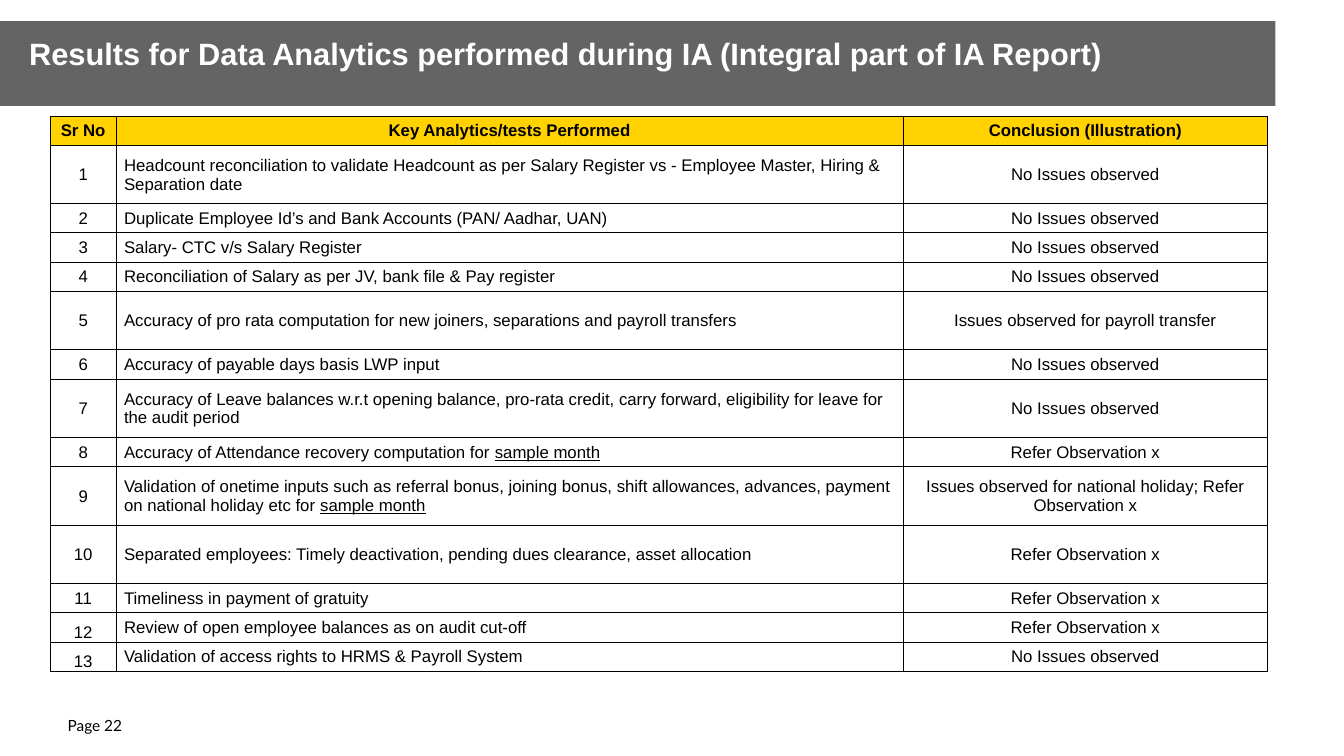
from dataclasses import dataclass

from lxml import etree
from pptx import Presentation
from pptx.dml.color import RGBColor
from pptx.enum.shapes import MSO_SHAPE
from pptx.enum.text import MSO_ANCHOR, PP_ALIGN
from pptx.oxml.ns import qn
from pptx.slide import Slide
from pptx.table import _Cell
from pptx.text.text import _Paragraph
from pptx.util import Inches, Pt

RECT = MSO_SHAPE.RECTANGLE
MIDDLE, BOTTOM = MSO_ANCHOR.MIDDLE, MSO_ANCHOR.BOTTOM
LEFT, CENTER = PP_ALIGN.LEFT, PP_ALIGN.CENTER

COLORS = {"banner": "646464", "header": "FFD200", "text": "000000",
          "title": "FFFFFF", "border": "000000"}
COL_WIDTHS = (0.65, 7.81, 3.61)
ROW_HEIGHT, TALL_ROW_HEIGHT = 0.29, 0.58
HEADERS = ("Sr No", "Key Analytics/tests Performed", "Conclusion (Illustration)")
NO_ISSUES = "No Issues observed"
REFER = "Refer Observation x"


@dataclass
class Test:
    description: str
    conclusion: str = NO_ISSUES
    underlined: str = ""
    tall: bool = False
    number_anchor: MSO_ANCHOR = MIDDLE


TESTS = [
    Test("Headcount reconciliation to validate Headcount as per Salary Register vs - "
         "Employee Master, Hiring & Separation date", tall=True),
    Test("Duplicate Employee Id’s and Bank Accounts (PAN/ Aadhar, UAN)"),
    Test("Salary- CTC v/s Salary Register"),
    Test("Reconciliation of Salary as per JV, bank file & Pay register"),
    Test("Accuracy of pro rata computation for new joiners, separations and payroll "
         "transfers", "Issues observed for payroll transfer", tall=True),
    Test("Accuracy of payable days basis LWP input"),
    Test("Accuracy of Leave balances w.r.t opening balance, pro-rata credit, carry "
         "forward, eligibility for leave for the audit period", tall=True),
    Test("Accuracy of Attendance recovery computation for ", REFER, "sample month"),
    Test("Validation of onetime inputs such as referral bonus, joining bonus, shift "
         "allowances, advances, payment on national holiday etc for ",
         "Issues observed for national holiday; Refer Observation x",
         "sample month", tall=True),
    Test("Separated employees: Timely deactivation, pending dues clearance, asset "
         "allocation", REFER, tall=True),
    Test("Timeliness in payment of gratuity", REFER),
    Test("Review of open employee balances as on audit cut-off", REFER,
         number_anchor=BOTTOM),
    Test("Validation of access rights to HRMS & Payroll System", number_anchor=BOTTOM),
]


def rgb(name: str) -> RGBColor:
    return RGBColor.from_string(COLORS[name])


def add_run(p: _Paragraph, text: str, size: float = 12, font: str = "Arial",
            color: str = "text", bold: bool = False, underline: bool = False) -> None:
    r = p.add_run()
    r.text = text
    r.font.size = Pt(size)
    r.font.name = font
    r.font.color.rgb = rgb(color)
    r.font.bold = bold
    r.font.underline = underline


def add_text_box(slide: Slide, left: float, top: float, width: float,
                 height: float) -> _Paragraph:
    """Add a text box without margins and return its first paragraph."""
    sp = slide.shapes.add_textbox(Inches(left), Inches(top), Inches(width), Inches(height))
    tf = sp.text_frame
    tf.word_wrap = True
    tf.margin_left = tf.margin_top = tf.margin_right = tf.margin_bottom = 0
    return tf.paragraphs[0]


def set_borders(cell: _Cell) -> None:
    tc_pr = cell._tc.get_or_add_tcPr()
    for tag in ("a:lnL", "a:lnR", "a:lnT", "a:lnB"):
        ln = etree.SubElement(tc_pr, qn(tag), w=str(Pt(0.5)))
        fill = etree.SubElement(ln, qn("a:solidFill"))
        etree.SubElement(fill, qn("a:srgbClr"), val=COLORS["border"])


def fill_cell(cell: _Cell, text: str, align: PP_ALIGN = CENTER,
              anchor: MSO_ANCHOR = MIDDLE, header: bool = False,
              underlined: str = "") -> None:
    set_borders(cell)
    if header:
        cell.fill.solid()
        cell.fill.fore_color.rgb = rgb("header")
    else:
        cell.fill.background()
    cell.vertical_anchor = anchor
    cell.margin_left = Inches(0.08 if align == LEFT else 0.01)
    cell.margin_top = cell.margin_right = Inches(0.01)
    cell.margin_bottom = 0
    p = cell.text_frame.paragraphs[0]
    p.alignment = align
    add_run(p, text, bold=header)
    if underlined:
        add_run(p, underlined, underline=True)


def add_banner(slide: Slide) -> None:
    sp = slide.shapes.add_shape(RECT, 0, Inches(0.21), Inches(12.65), Inches(0.84))
    sp.shadow.inherit = False
    sp.fill.solid()
    sp.fill.fore_color.rgb = rgb("banner")
    sp.line.fill.background()


def add_results_table(slide: Slide) -> None:
    heights = [ROW_HEIGHT] + [TALL_ROW_HEIGHT if t.tall else ROW_HEIGHT for t in TESTS]
    table = slide.shapes.add_table(
        len(heights), len(COL_WIDTHS), Inches(0.5), Inches(1.15),
        Inches(sum(COL_WIDTHS)), Inches(sum(heights))).table
    table.first_row = table.horz_banding = False
    for column, width in zip(table.columns, COL_WIDTHS):
        column.width = Inches(width)
    for row, height in zip(table.rows, heights):
        row.height = Inches(height)
    for col, text in enumerate(HEADERS):
        fill_cell(table.cell(0, col), text, header=True)
    for number, test in enumerate(TESTS, start=1):
        fill_cell(table.cell(number, 0), str(number), anchor=test.number_anchor)
        fill_cell(table.cell(number, 1), test.description, LEFT,
                  underlined=test.underlined)
        fill_cell(table.cell(number, 2), test.conclusion)


def main() -> None:
    prs = Presentation()
    prs.slide_width, prs.slide_height = Inches(13.33), Inches(7.5)
    slide = prs.slides.add_slide(prs.slide_layouts[6])

    add_run(add_text_box(slide, 0.67, 7.1, 1.05, 0.22), "Page 22", 11, "Lato")
    add_banner(slide)
    add_results_table(slide)
    title = add_text_box(slide, 0.29, 0.4, 12.07, 0.47)
    title.line_spacing = 0.85
    add_run(title, "Results for Data Analytics performed during IA "
            "(Integral part of IA Report)", 22, color="title", bold=True)

    prs.save("out.pptx")


if __name__ == "__main__":
    main()
